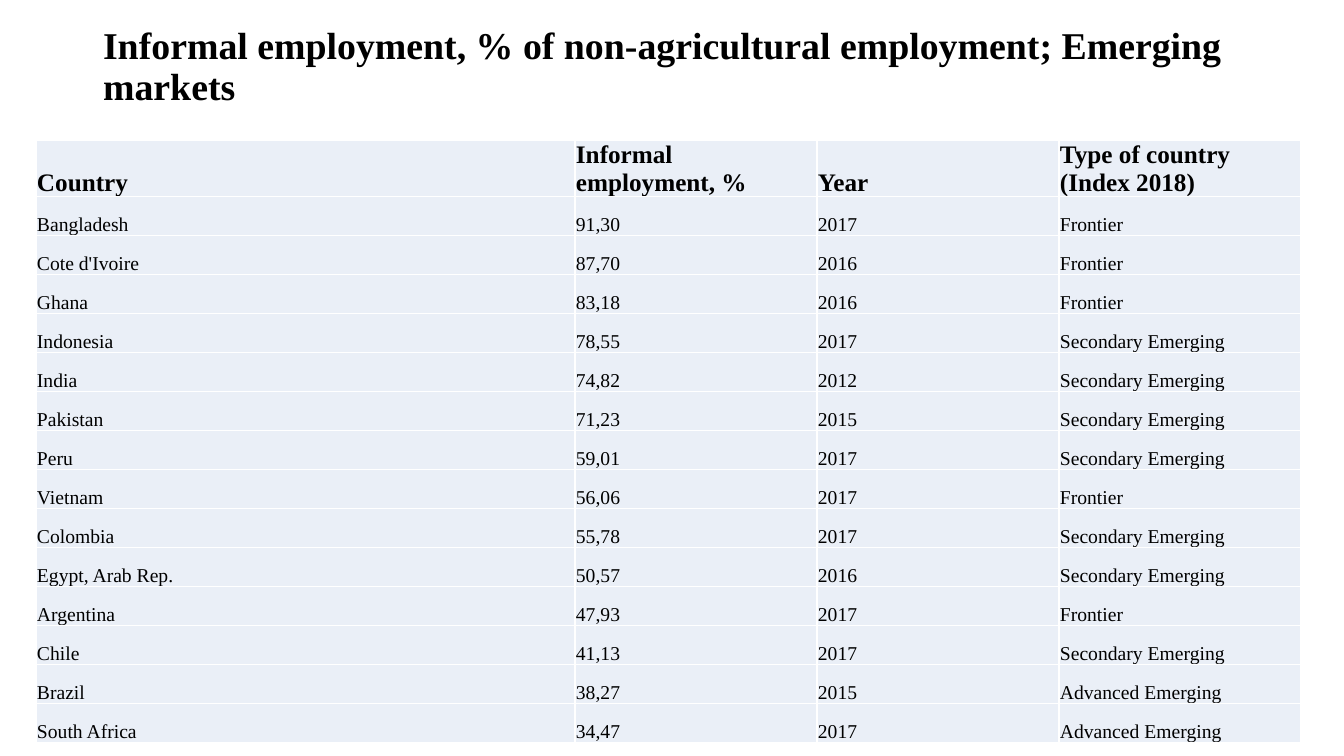
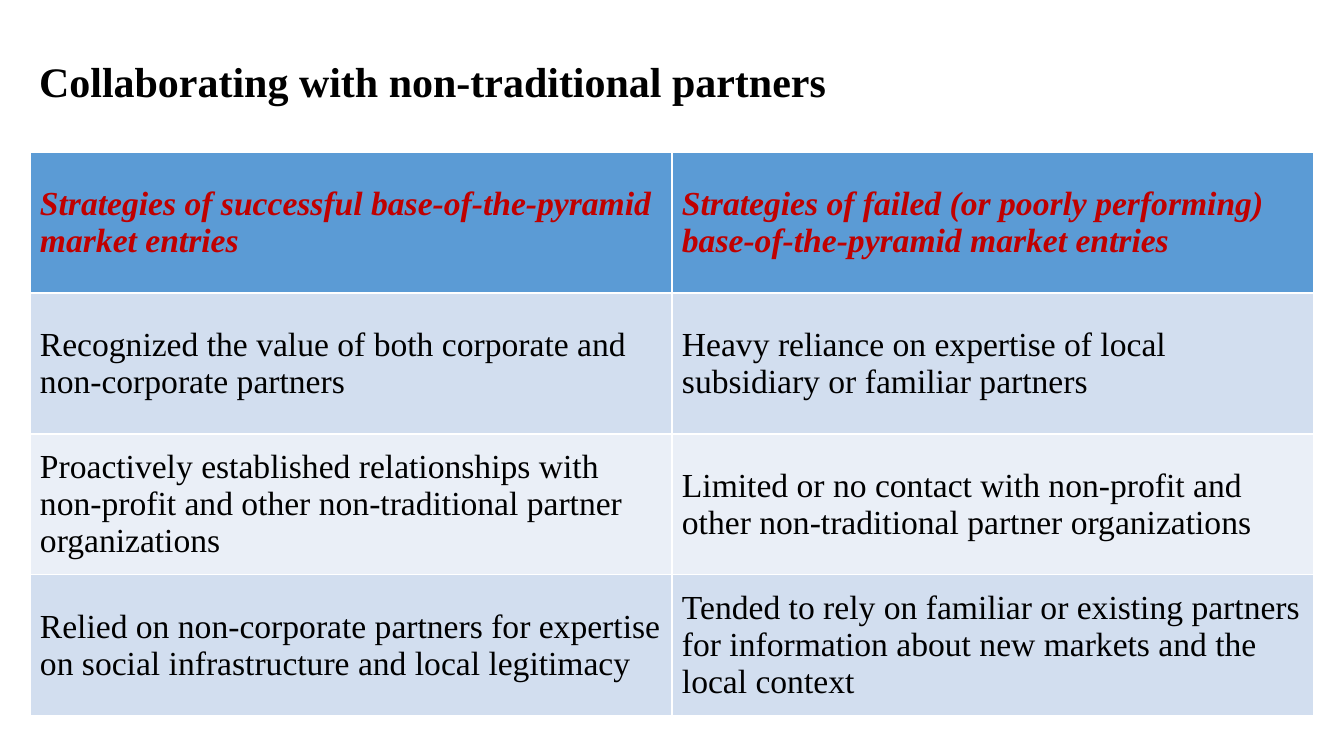
"""Build two table slides on informal employment and non-traditional partners."""
from pptx import Presentation
from pptx.dml.color import RGBColor
from pptx.enum.text import MSO_ANCHOR, MSO_AUTO_SIZE, PP_ALIGN
from pptx.util import Pt

MIDDLE, BOTTOM = MSO_ANCHOR.MIDDLE, MSO_ANCHOR.BOTTOM
LEFT = PP_ALIGN.LEFT
NO_AUTOFIT = MSO_AUTO_SIZE.NONE
TITLE_ONLY = 5
FONT = "Times New Roman"
COLORS = {
    "text": "000000",
    "accent": "C00000",
    "header": "5B9BD5",
    "band": "D2DEEF",
    "pale": "EAEFF7",
}


def px(value):
    return round(value * 914400 / 100.8)


def style_text(text_frame, size, color, bold=False, italic=False):
    for paragraph in text_frame.paragraphs:
        paragraph.alignment = LEFT
        font = paragraph.font
        font.name, font.size = FONT, Pt(size)
        font.bold, font.italic = bold, italic
        font.color.rgb = RGBColor.from_string(COLORS[color])


presentation = Presentation()
presentation.slide_width = px(1344)
presentation.slide_height = px(756)

employment_rows = [
    ("Country", "Informal employment, %", "Year", "Type of country (Index 2018)"),
    ("Bangladesh", "91,30", "2017", "Frontier"),
    ("Cote d'Ivoire", "87,70", "2016", "Frontier"),
    ("Ghana", "83,18", "2016", "Frontier"),
    ("Indonesia", "78,55", "2017", "Secondary Emerging"),
    ("India", "74,82", "2012", "Secondary Emerging"),
    ("Pakistan", "71,23", "2015", "Secondary Emerging"),
    ("Peru", "59,01", "2017", "Secondary Emerging"),
    ("Vietnam", "56,06", "2017", "Frontier"),
    ("Colombia", "55,78", "2017", "Secondary Emerging"),
    ("Egypt, Arab Rep.", "50,57", "2016", "Secondary Emerging"),
    ("Argentina", "47,93", "2017", "Frontier"),
    ("Chile", "41,13", "2017", "Secondary Emerging"),
    ("Brazil", "38,27", "2015", "Advanced Emerging"),
    ("South Africa", "34,47", "2017", "Advanced Emerging"),
]
strategy_rows = [
    ("Strategies of successful base-of-the-pyramid market entries",
     "Strategies of failed (or poorly performing) base-of-the-pyramid market entries"),
    ("Recognized the value of both corporate and non-corporate partners",
     "Heavy reliance on expertise of local subsidiary or familiar partners"),
    ("Proactively established relationships with non-profit and other "
     "non-traditional partner organizations",
     "Limited or no contact with non-profit and other non-traditional "
     "partner organizations"),
    ("Relied on non-corporate partners for expertise on social infrastructure "
     "and local legitimacy",
     "Tended to rely on familiar or existing partners for information about "
     "new markets and the local context"),
]

slides = [
    {
        "title": "Informal employment, % of non-agricultural employment; Emerging markets",
        "title_box": (93, 40, 1159, 55), "title_size": 27,
        "rows": employment_rows, "origin": (36, 140),
        "widths": [539, 242, 242, 242], "header_height": 56, "row_height": 39,
        "header_size": 18, "body_size": 14, "header_color": "text",
        "header_fill": "pale", "fills": ["pale"], "anchor": BOTTOM,
        "insets": (1, 1, 1, 0), "strong_header": False,
    },
    {
        "title": "Collaborating with non-traditional partners",
        "title_box": (29, 40, 1270, 87), "title_size": 30,
        "rows": strategy_rows, "origin": (30, 152),
        "widths": [642, 642], "header_height": 141, "row_height": 141,
        "header_size": 24, "body_size": 24, "header_color": "accent",
        "header_fill": "header", "fills": ["band", "pale"], "anchor": MIDDLE,
        "insets": (10, 5, 10, 5), "strong_header": True,
    },
]

for content in slides:
    slide = presentation.slides.add_slide(presentation.slide_layouts[TITLE_ONLY])
    title = slide.shapes.title
    title.left, title.top, title.width, title.height = map(px, content["title_box"])
    title_frame = title.text_frame
    title_frame.text = content["title"]
    title_frame.word_wrap = True
    title_frame.auto_size = NO_AUTOFIT
    title_frame.vertical_anchor = MIDDLE
    title_frame.paragraphs[0].line_spacing = 0.9
    style_text(title_frame, content["title_size"], "text", bold=True)

    rows, widths = content["rows"], content["widths"]
    left, top = content["origin"]
    heights = [content["header_height"]] + [content["row_height"]] * (len(rows) - 1)
    table = slide.shapes.add_table(
        len(rows), len(widths), px(left), px(top), px(sum(widths)), px(sum(heights))
    ).table
    table.first_row = content["strong_header"]
    for column, width in zip(table.columns, widths):
        column.width = px(width)
    for row_index, (row, height, values) in enumerate(zip(table.rows, heights, rows)):
        row.height = px(height)
        is_header = row_index == 0
        fills = content["fills"]
        fill = content["header_fill"] if is_header else fills[(row_index - 1) % len(fills)]
        for cell, value in zip(row.cells, values):
            cell.text = value
            cell.vertical_anchor = content["anchor"]
            (cell.margin_left, cell.margin_top,
             cell.margin_right, cell.margin_bottom) = map(px, content["insets"])
            cell.fill.solid()
            cell.fill.fore_color.rgb = RGBColor.from_string(COLORS[fill])
            if is_header:
                style_text(cell.text_frame, content["header_size"], content["header_color"],
                           bold=True, italic=content["strong_header"])
            else:
                style_text(cell.text_frame, content["body_size"], "text")

presentation.save("out.pptx")
